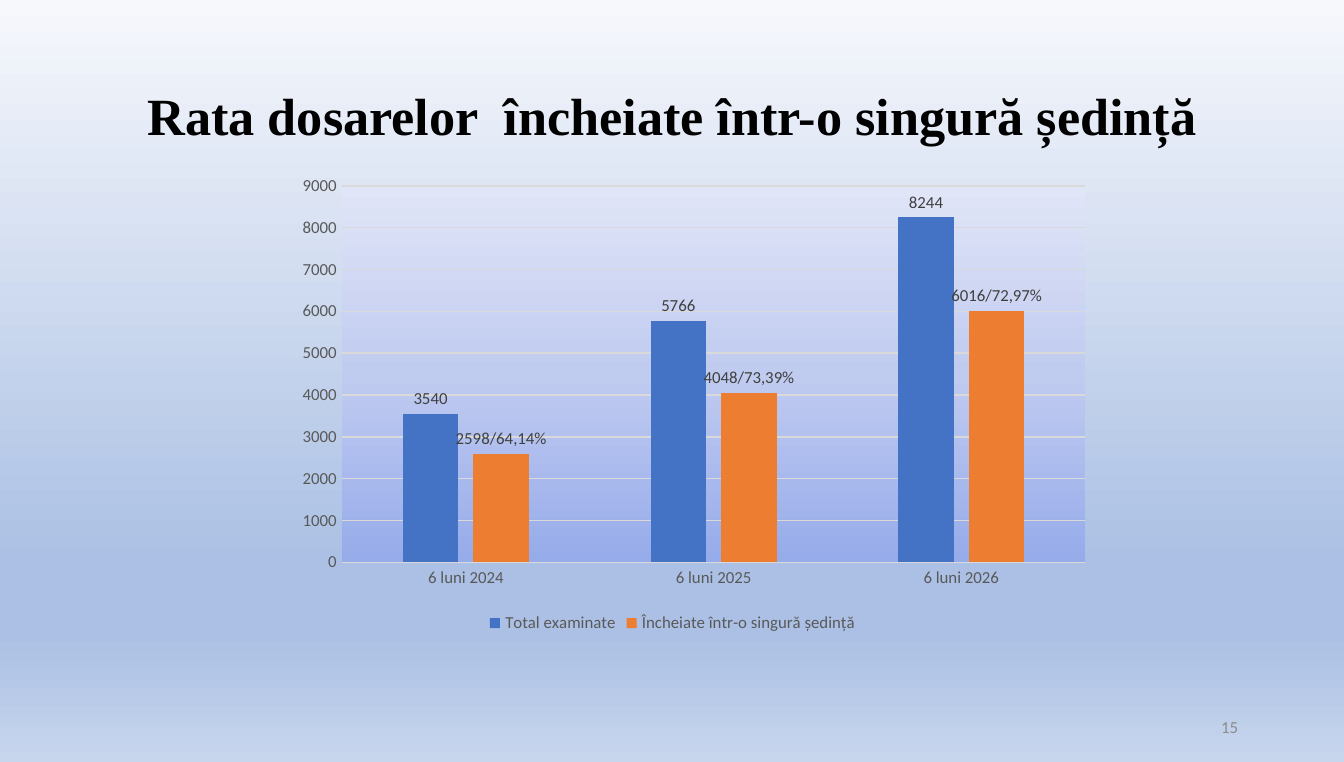
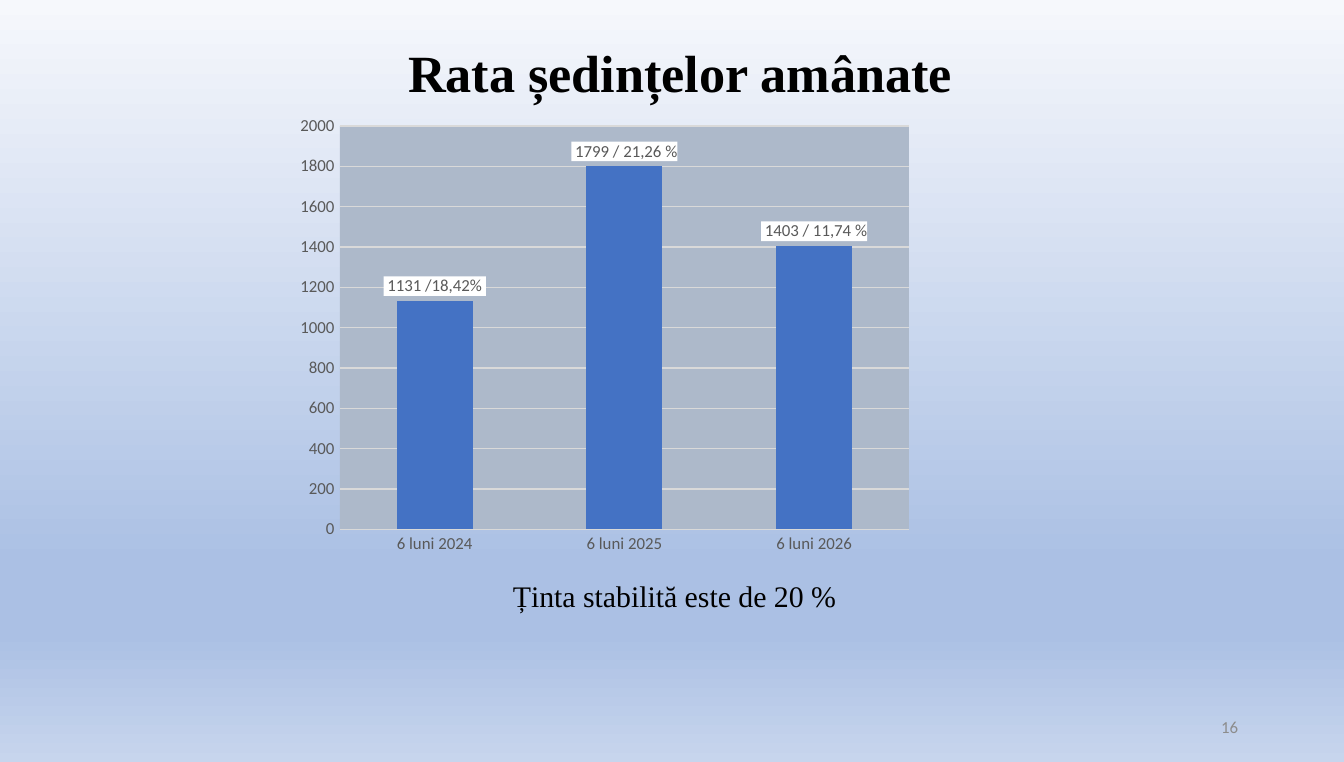
from dataclasses import dataclass
from typing import Optional, Union

from lxml import etree
from pptx import Presentation
from pptx.chart.chart import Chart
from pptx.chart.data import CategoryChartData
from pptx.dml.color import RGBColor
from pptx.enum.chart import XL_CHART_TYPE, XL_LABEL_POSITION, XL_LEGEND_POSITION, XL_TICK_MARK
from pptx.enum.text import MSO_ANCHOR, PP_ALIGN
from pptx.oxml import parse_xml
from pptx.oxml.ns import nsdecls, qn
from pptx.slide import Slide
from pptx.util import Inches, Pt

COLUMNS = XL_CHART_TYPE.COLUMN_CLUSTERED
OUTSIDE_END = XL_LABEL_POSITION.OUTSIDE_END
LEGEND_BOTTOM = XL_LEGEND_POSITION.BOTTOM
NO_TICK = XL_TICK_MARK.NONE
CENTER, RIGHT = PP_ALIGN.CENTER, PP_ALIGN.RIGHT
MIDDLE = MSO_ANCHOR.MIDDLE

SERIF, SANS = "Times New Roman", "Calibri"
BLACK = RGBColor(0x00, 0x00, 0x00)
WHITE = RGBColor(0xFF, 0xFF, 0xFF)
BLUE = RGBColor(0x44, 0x72, 0xC4)
ORANGE = RGBColor(0xED, 0x7D, 0x31)
AXIS_GRAY = RGBColor(0x59, 0x59, 0x59)
LABEL_GRAY = RGBColor(0x40, 0x40, 0x40)
NUMBER_GRAY = RGBColor(0x8C, 0x8C, 0x8C)
GRID_GRAY = RGBColor(0xD9, 0xD9, 0xD9)
PLOT_GRAY = RGBColor(0xAD, 0xB9, 0xCA)
SKY_TOP = RGBColor(0xF6, 0xF8, 0xFC)
SKY_MIDDLE = RGBColor(0xAB, 0xC0, 0xE4)
SKY_BOTTOM = RGBColor(0xC7, 0xD5, 0xED)
PLOT_LOW = RGBColor(0x96, 0xAB, 0xEA)
PLOT_MIDDLE = RGBColor(0xC0, 0xCB, 0xF0)
PLOT_HIGH = RGBColor(0xE0, 0xE5, 0xF7)

PERIODS = ["6 luni 2024", "6 luni 2025", "6 luni 2026"]


@dataclass(frozen=True)
class Box:
    left: float
    top: float
    width: float
    height: float

    def lengths(self) -> list:
        return [Inches(v) for v in (self.left, self.top, self.width, self.height)]


@dataclass(frozen=True)
class TextStyle:
    font: str
    size: float
    color: RGBColor
    align: PP_ALIGN = CENTER
    bold: bool = False


@dataclass(frozen=True)
class Gradient:
    stops: tuple
    angle: int


@dataclass(frozen=True)
class Series:
    name: str
    values: tuple
    color: RGBColor
    labels: tuple = ()


@dataclass(frozen=True)
class ColumnChart:
    box: Box
    plot: Box  # fractions of the chart area
    plot_fill: Union[Gradient, RGBColor]
    series: tuple
    maximum: int
    step: int
    gap: int
    overlap: int
    label_color: RGBColor
    label_fill: Optional[RGBColor] = None
    base_line: bool = False
    legend: bool = False


TITLE = TextStyle(SERIF, 28, BLACK, bold=True)
NUMBER = TextStyle(SANS, 9, NUMBER_GRAY, RIGHT)
TARGET = TextStyle(SERIF, 16, BLACK)
NUMBER_BOX = Box(7.06, 5.26, 2.25, 0.3)

SKY = Gradient(((0, SKY_TOP), (74, SKY_MIDDLE), (83, SKY_MIDDLE), (100, SKY_BOTTOM)), 90)
PLOT_GLOW = Gradient(((0, PLOT_LOW), (50, PLOT_MIDDLE), (100, PLOT_HIGH)), 270)

SINGLE_HEARING = ColumnChart(
    box=Box(1.93, 1.13, 6.15, 3.62),
    plot=Box(0.1, 0.07, 0.9, 0.774),
    plot_fill=PLOT_GLOW,
    series=(
        Series("Total examinate", (3540, 5766, 8244), BLUE),
        Series("Încheiate într-o singură ședință", (2598, 4048, 6016), ORANGE,
               ("2598/64,14%", "4048/73,39%", "6016/72,97%")),
    ),
    maximum=9000, step=1000, gap=219, overlap=-27,
    label_color=LABEL_GRAY, base_line=True, legend=True,
)
POSTPONED = ColumnChart(
    box=Box(2, 0.85, 6, 3.97),
    plot=Box(0.088, 0.022, 0.706, 0.756),
    plot_fill=PLOT_GRAY,
    series=(
        Series("Series 1", (1131, 1799, 1403), BLUE,
               (" 1131 /18,42% ", " 1799 / 21,26 %", " 1403 / 11,74 %")),
    ),
    maximum=2000, step=200, gap=150, overlap=0,
    label_color=AXIS_GRAY, label_fill=WHITE,
)


# Fills and chart XML
def fill_xml(fill: Union[Gradient, RGBColor, None]) -> str:
    if fill is None:
        return "<a:noFill/>"
    if isinstance(fill, RGBColor):
        return f'<a:solidFill><a:srgbClr val="{fill}"/></a:solidFill>'
    stops = "".join(f'<a:gs pos="{pos * 1000}"><a:srgbClr val="{color}"/></a:gs>'
                    for pos, color in fill.stops)
    return (f'<a:gradFill rotWithShape="1"><a:gsLst>{stops}</a:gsLst>'
            f'<a:lin ang="{fill.angle * 60000}" scaled="0"/></a:gradFill>')


def chart_part_fill(fill: Union[Gradient, RGBColor, None]) -> etree.ElementBase:
    return parse_xml(f'<c:spPr {nsdecls("c", "a")}>{fill_xml(fill)}'
                     '<a:ln><a:noFill/></a:ln></c:spPr>')


def set_plot_area(chart: Chart, plot: Box, fill: Union[Gradient, RGBColor]) -> None:
    area = chart.element.find(".//" + qn("c:plotArea"))
    for old in area.findall(qn("c:layout")):
        area.remove(old)
    places = (f'<c:x val="{plot.left}"/><c:y val="{plot.top}"/>'
              f'<c:w val="{plot.width}"/><c:h val="{plot.height}"/>')
    area.insert(0, parse_xml(
        f'<c:layout {nsdecls("c")}><c:manualLayout><c:layoutTarget val="inner"/>'
        f'<c:xMode val="edge"/><c:yMode val="edge"/>{places}</c:manualLayout></c:layout>'))
    area.append(chart_part_fill(fill))


def set_background(s: Slide, gradient: Gradient) -> None:
    s.background.fill.solid()
    props = s.element.find(".//" + qn("p:bgPr"))
    solid = props.find(qn("a:solidFill"))
    wrapper = parse_xml(f'<p:bgPr {nsdecls("p", "a")}>{fill_xml(gradient)}</p:bgPr>')
    props.replace(solid, wrapper[0])


# Text
def set_font(font, size: float, color: RGBColor, name: str = SANS) -> None:
    font.name = name
    font.size = Pt(size)
    font.color.rgb = color


def add_text(s: Slide, box: Box, text: str, style: TextStyle) -> None:
    tf = s.shapes.add_textbox(*box.lengths()).text_frame
    tf.word_wrap = True
    tf.vertical_anchor = MIDDLE
    p = tf.paragraphs[0]
    p.alignment = style.align
    r = p.add_run()
    r.text = text
    set_font(r.font, style.size, style.color, style.font)
    r.font.bold = style.bold


# Charts
def style_axes(chart: Chart, spec_chart: ColumnChart) -> None:
    values, periods = chart.value_axis, chart.category_axis
    for axis in (values, periods):
        axis.major_tick_mark = axis.minor_tick_mark = NO_TICK
        set_font(axis.tick_labels.font, 9, AXIS_GRAY)
        axis.format.line.fill.background()
    values.minimum_scale = 0
    values.maximum_scale = spec_chart.maximum
    values.major_unit = spec_chart.step
    values.has_major_gridlines = True
    lines = [values.major_gridlines.format.line]
    if spec_chart.base_line:
        lines.append(periods.format.line)
    for line in lines:
        line.color.rgb = GRID_GRAY
        line.width = Pt(0.75)


def style_series(ser, item: Series, spec_chart: ColumnChart) -> None:
    ser.invert_if_negative = False
    ser.format.fill.solid()
    ser.format.fill.fore_color.rgb = item.color
    labels = ser.data_labels
    labels.show_value = True
    labels.position = OUTSIDE_END
    set_font(labels.font, 9, spec_chart.label_color)
    for i, text in enumerate(item.labels):
        label = ser.points[i].data_label
        r = label.text_frame.paragraphs[0].add_run()
        r.text = text
        set_font(r.font, 9, spec_chart.label_color)
        label.position = OUTSIDE_END
    if spec_chart.label_fill is not None:
        for tx in labels._element.findall(f"{qn('c:dLbl')}/{qn('c:tx')}"):
            tx.addnext(chart_part_fill(spec_chart.label_fill))


def add_column_chart(s: Slide, spec_chart: ColumnChart) -> None:
    data = CategoryChartData()
    data.categories = PERIODS
    for item in spec_chart.series:
        data.add_series(item.name, item.values)
    chart = s.shapes.add_chart(COLUMNS, *spec_chart.box.lengths(), data).chart
    set_font(chart.font, 10, BLACK)
    chart.has_title = False
    chart.has_legend = spec_chart.legend
    if spec_chart.legend:
        chart.legend.position = LEGEND_BOTTOM
        chart.legend.include_in_layout = False
        set_font(chart.legend.font, 9, AXIS_GRAY)
    style_axes(chart, spec_chart)
    plot = chart.plots[0]
    plot.vary_by_categories = False
    plot.gap_width = spec_chart.gap
    plot.overlap = spec_chart.overlap
    for ser, item in zip(plot.series, spec_chart.series):
        style_series(ser, item, spec_chart)
    set_plot_area(chart, spec_chart.plot, spec_chart.plot_fill)
    chart.element.find(qn("c:chart")).addnext(chart_part_fill(None))


# Slides
def add_slide(prs: Presentation, number: int, title: str, title_box: Box,
              column_chart: ColumnChart) -> Slide:
    s = prs.slides.add_slide(prs.slide_layouts[6])
    set_background(s, SKY)
    add_text(s, title_box, title, TITLE)
    add_text(s, NUMBER_BOX, str(number), NUMBER)
    add_column_chart(s, column_chart)
    return s


def main() -> None:
    prs = Presentation()
    prs.slide_width, prs.slide_height = Inches(10), Inches(5.67)
    add_slide(prs, 15, "Rata dosarelor  încheiate într-o singură ședință",
              Box(0.5, 0.33, 9, 1.04), SINGLE_HEARING)
    s = add_slide(prs, 16, "Rata ședințelor amânate",
                  Box(0.5, 0.06, 9.12, 0.94), POSTPONED)
    add_text(s, Box(3.37, 4.23, 3.3, 0.4), "Ținta stabilită este de 20 %", TARGET)
    prs.save("out.pptx")


if __name__ == "__main__":
    main()
